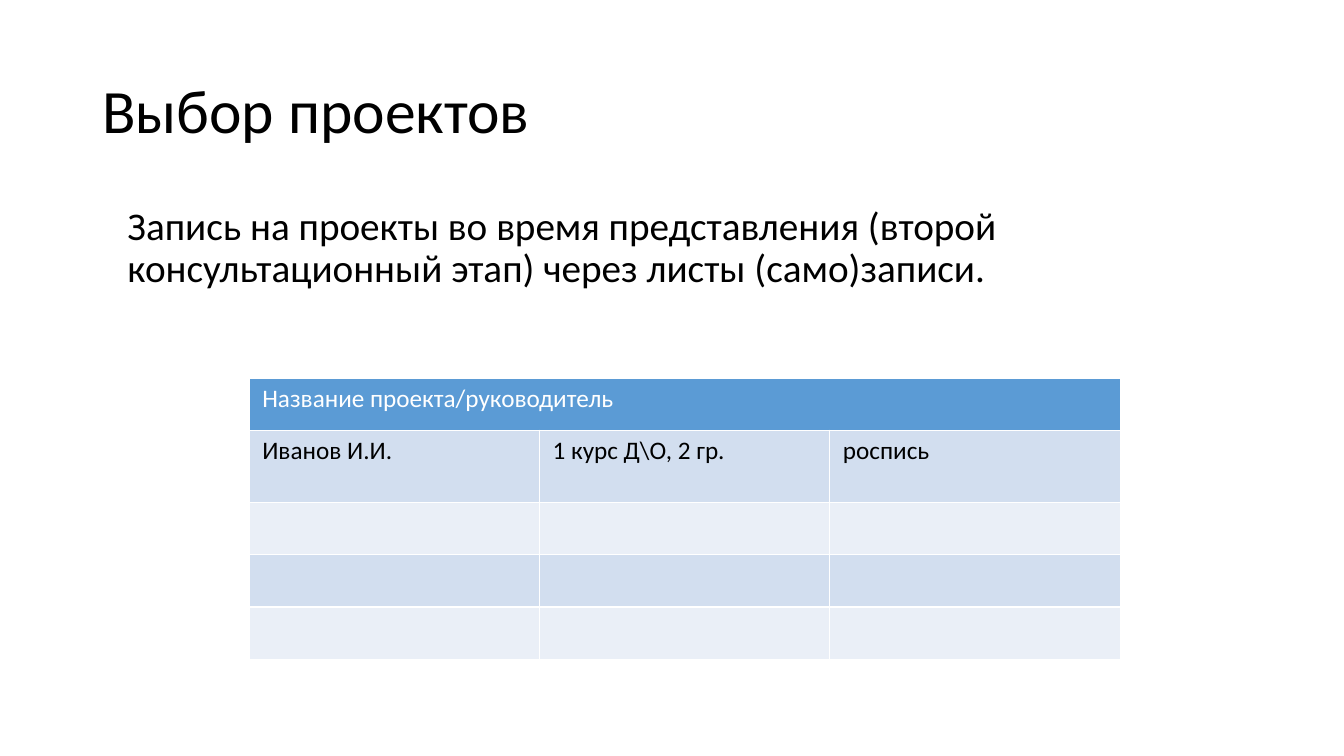
import pptx
import pptx.dml.color
import pptx.enum.text
import pptx.oxml
import pptx.oxml.ns
import pptx.util

Pt = pptx.util.Pt

FONT = "Calibri"
TITLE = "Выбор проектов"
BODY = "Запись на проекты во время представления (второй консультационный этап) через листы (само)записи."
ROWS = [
    ["Название проекта/руководитель", "", ""],
    ["Иванов И.И.", "1 курс Д\\О, 2 гр.", "роспись"],
    ["", "", ""],
    ["", "", ""],
    ["", "", ""],
]
ROW_HEIGHTS = [37.4, 51.4, 37.4, 37.4, 37.4]
COLUMN_WIDTH = 207.4
HEADER_FILL = "5B9BD5"
BAND_FILLS = ["EAEFF7", "D2DEEF"]
BLACK, WHITE = "000000", "FFFFFF"


def color(value):
    """Turn a hex string into a colour."""
    return pptx.dml.color.RGBColor.from_string(value)


def style(para, size, ink):
    """Set font, size and colour of a paragraph and its runs."""
    for font in [para.font] + [span.font for span in para.runs]:
        font.name = FONT
        font.size = Pt(size)
        font.color.rgb = color(ink)


def add_text(page, text, place, size, anchor):
    """Add a wrapped text box and return its paragraph."""
    frame = page.shapes.add_textbox(*map(Pt, place)).text_frame
    frame.word_wrap = True
    frame.vertical_anchor = anchor
    frame.text = text
    para = frame.paragraphs[0]
    para.line_spacing = 0.9
    style(para, size, BLACK)
    return para


def add_borders(cell):
    """Draw thin white lines on all four sides of a cell."""
    properties = cell._tc.get_or_add_tcPr()
    for side in ("lnL", "lnR", "lnT", "lnB"):
        properties.append(pptx.oxml.parse_xml(
            f'<a:{side} {pptx.oxml.ns.nsdecls("a")} w="{Pt(1)}"><a:solidFill>'
            f'<a:srgbClr val="{WHITE}"/></a:solidFill></a:{side}>'))


def add_signup_table(page):
    """Add the sign-up sheet with a merged header and banded rows."""
    columns = len(ROWS[0])
    table = page.shapes.add_table(
        len(ROWS), columns, Pt(178), Pt(270),
        Pt(COLUMN_WIDTH * columns), Pt(sum(ROW_HEIGHTS))).table
    for column in table.columns:
        column.width = Pt(COLUMN_WIDTH)
    for index, (texts, height) in enumerate(zip(ROWS, ROW_HEIGHTS)):
        table.rows[index].height = Pt(height)
        for position, text in enumerate(texts):
            cell = table.cell(index, position)
            cell.text = text
            cell.margin_left = cell.margin_right = Pt(9.4)
            add_borders(cell)
            cell.fill.solid()
            cell.fill.fore_color.rgb = color(BAND_FILLS[index % 2] if index else HEADER_FILL)
            style(cell.text_frame.paragraphs[0], 18, BLACK if index else WHITE)
    table.cell(0, 0).merge(table.cell(0, columns - 1))


def main():
    """Build the slide and save it."""
    deck = pptx.Presentation()
    deck.slide_width, deck.slide_height = Pt(960), Pt(540)
    page = deck.slides.add_slide(deck.slide_layouts[6])
    anchors = pptx.enum.text.MSO_ANCHOR
    add_text(page, TITLE, (66, 28.8, 828, 104.4), 44, anchors.MIDDLE)
    body = add_text(page, BODY, (66, 143.8, 828, 342.7), 28, anchors.TOP)
    body.space_before = Pt(10)
    body._p.get_or_add_pPr().set("marL", str(Pt(18)))
    add_signup_table(page)
    deck.save("out.pptx")


if __name__ == "__main__":
    main()
